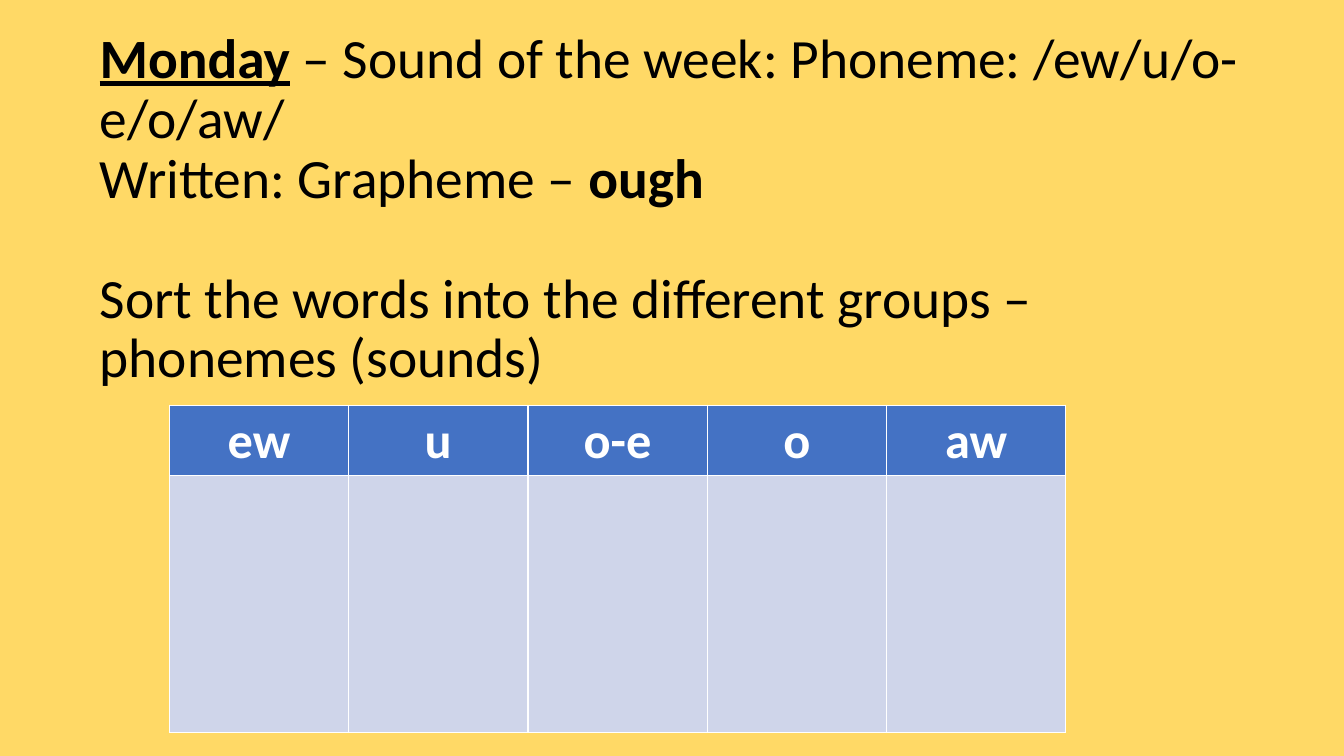
from pptx import Presentation
from pptx.dml.color import RGBColor
from pptx.enum.text import MSO_ANCHOR, PP_ALIGN
from pptx.util import Inches, Pt

MIDDLE = MSO_ANCHOR.MIDDLE
CENTER = PP_ALIGN.CENTER


def color(code):
    return RGBColor.from_string(code)


class Page:
    """Holds the style and the current slide of the phonics lesson."""

    font = "Calibri"
    back, ink, head, body, light = "FFD966", "000000", "4472C4", "CFD5EA", "FFFFFF"

    def __init__(self, deck):
        self.slide = deck.slides.add_slide(deck.slide_layouts[6])
        fill = self.slide.background.fill
        fill.solid()
        fill.fore_color.rgb = color(self.back)

    def style(self, para, size, code):
        para.font.name = self.font
        para.font.size = Pt(size)
        para.font.color.rgb = color(code)

    def text(self, box, lines, size):
        frame = self.slide.shapes.add_textbox(*map(Inches, box)).text_frame
        frame.word_wrap = True
        frame.vertical_anchor = MIDDLE
        for i, (gap, runs) in enumerate(lines):
            para = frame.add_paragraph() if i else frame.paragraphs[0]
            self.style(para, size, self.ink)
            para.line_spacing = 0.9
            para.space_before = Pt(gap)
            for words, bold, under in runs:
                run = para.add_run()
                run.text = words
                run.font.bold = bold
                run.font.underline = under

    def table(self, box, heads, rows, size):
        shape = self.slide.shapes.add_table(len(rows), len(heads), *map(Inches, box))
        grid = shape.table
        for row, high in zip(grid.rows, rows):
            row.height = Inches(high)
        for i, word in enumerate(heads):
            for j in range(len(rows)):
                cell = grid.cell(j, i)
                cell.fill.solid()
                cell.fill.fore_color.rgb = color(self.body if j else self.head)
            top = grid.cell(0, i)
            top.text = word
            para = top.text_frame.paragraphs[0]
            para.alignment = CENTER
            self.style(para, size, self.light)
            para.font.bold = True


def main():
    deck = Presentation()
    deck.slide_width, deck.slide_height = Inches(13.33), Inches(7.5)
    page = Page(deck)
    page.text((0.89, 1.36, 11.5, 1.45), [
        (0, [("Monday", True, True),
             (" – Sound of the week: Phoneme: /ew/u/o-e/o/aw/", False, False)]),
        (0, [("Written: Grapheme – ", False, False), ("ough", True, False)]),
        (43, [("Sort the words into the different groups – phonemes (sounds)",
               False, False)]),
    ], 39.6)
    page.table((1.68, 4.02, 8.89, 3.25), ["ew", "u", "o-e", "o", "aw"],
               [0.7, 2.55], 36)
    deck.save("out.pptx")


if __name__ == "__main__":
    main()
